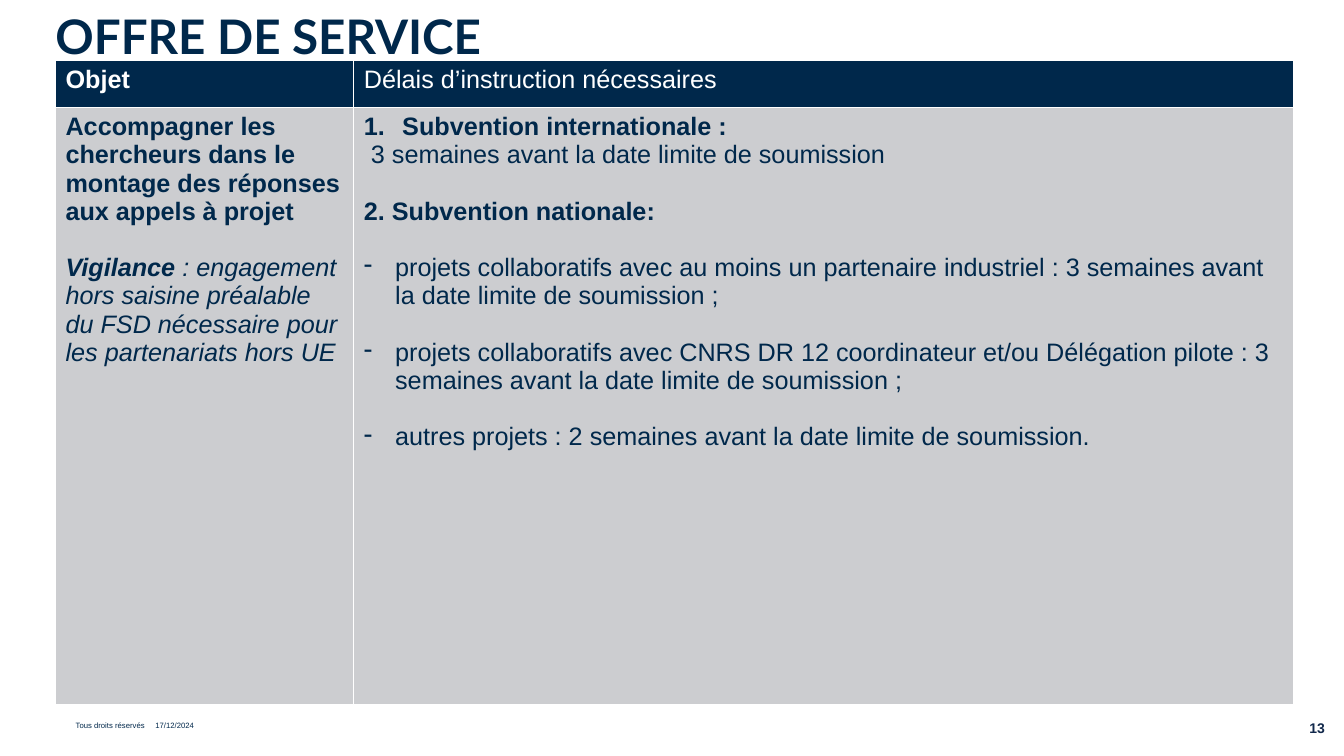
from lxml import etree
from pptx import Presentation
from pptx.dml.color import RGBColor
from pptx.enum.text import MSO_ANCHOR, PP_ALIGN
from pptx.oxml.ns import qn
from pptx.util import Inches, Pt

NAVY = RGBColor(0x00, 0x28, 0x4B)
PAGE_NAVY = RGBColor(0x11, 0x28, 0x4B)
GREY = RGBColor(0xCC, 0xCD, 0xD0)
WHITE = RGBColor(0xFF, 0xFF, 0xFF)
TOP, MIDDLE = MSO_ANCHOR.TOP, MSO_ANCHOR.MIDDLE
LEFT, RIGHT = PP_ALIGN.LEFT, PP_ALIGN.RIGHT
BODY_SIZE = 18
LINE_GAP = Pt(20.1)
DATE_TAB = Inches(0.79)

# A paragraph is (runs, gap before, indent, hanging bullet); a run is (text, bold, italic).
HEADER = [
    [([("Objet", True, False)], False, 0, None)],
    [([("Délais d’instruction nécessaires", False, False)], False, 0, None)],
]
SUPPORT = [
    ([("Accompagner les chercheurs dans le montage des réponses aux appels à projet",
       True, False)], False, 0, None),
    ([("Vigilance", True, True),
      (" : engagement hors saisine préalable du FSD nécessaire pour les partenariats hors UE",
       False, True)], True, 0, None),
]
PROJECTS = [
    "projets collaboratifs avec au moins un partenaire industriel : "
    "3 semaines avant la date limite de soumission ;",
    "projets collaboratifs avec CNRS DR 12 coordinateur et/ou Délégation pilote : "
    "3 semaines avant la date limite de soumission ;",
    "autres projets : 2 semaines avant la date limite de soumission.",
]
DEADLINES = [
    ([("Subvention internationale :", True, False)], False, 0.38, "1."),
    ([("3 semaines avant la date limite de soumission", False, False)], False, 0.07, None),
    ([("2. Subvention nationale:", True, False)], True, 0, None),
] + [([(text, False, False)], True, 0.31, "-") for text in PROJECTS]


class SlideBuilder:
    """Holds the style and the slide; lengths are percentages of the slide's size."""

    def __init__(self, prs):
        self.prs = prs
        self.slide = prs.slides.add_slide(prs.slide_layouts[6])

    def across(self, share):
        return round(self.prs.slide_width * share / 100)

    def down(self, share):
        return round(self.prs.slide_height * share / 100)

    def style(self, r, size, color, bold=False, italic=False, font="Arial"):
        r.font.name, r.font.size, r.font.color.rgb = font, Pt(size), color
        r.font.bold, r.font.italic = bold, italic

    def text(self, text, box, size, color, bold=False, font="Arial",
             align=LEFT, anchor=TOP, spacing=None):
        x, y, w, h = box
        sp = self.slide.shapes.add_textbox(
            self.across(x), self.down(y), self.across(w), self.down(h))
        tf = sp.text_frame
        tf.word_wrap, tf.vertical_anchor = True, anchor
        tf.margin_left = tf.margin_top = tf.margin_right = tf.margin_bottom = 0
        p = tf.paragraphs[0]
        p.text, p.alignment, p.line_spacing = text, align, spacing
        self.style(p.runs[0], size, color, bold, font=font)
        return p

    def tab(self, p, position):
        tabs = etree.SubElement(p._p.get_or_add_pPr(), qn("a:tabLst"))
        etree.SubElement(tabs, qn("a:tab"), pos=str(position), algn="l")

    def indent(self, p, inches, bullet):
        pPr = p._p.get_or_add_pPr()
        pPr.set("marL", str(Inches(inches)))
        if bullet == "1.":
            etree.SubElement(pPr, qn("a:buAutoNum"), type="arabicPeriod")
        elif bullet:
            etree.SubElement(pPr, qn("a:buChar"), char=bullet)
        if bullet:
            pPr.set("indent", str(-Inches(inches)))

    def borders(self, cell):
        tcPr = cell._tc.get_or_add_tcPr()
        for i, side in enumerate(("a:lnL", "a:lnR", "a:lnT", "a:lnB")):
            ln = etree.Element(qn(side), w=str(Pt(1)))
            fill = etree.SubElement(ln, qn("a:solidFill"))
            etree.SubElement(fill, qn("a:srgbClr"), val=str(WHITE))
            tcPr.insert(i, ln)

    def cell(self, cell, paragraphs, fill, color):
        cell.fill.solid()
        cell.fill.fore_color.rgb = fill
        self.borders(cell)
        tf = cell.text_frame
        for i, (runs, gap, inches, bullet) in enumerate(paragraphs):
            p = tf.add_paragraph() if i else tf.paragraphs[0]
            self.indent(p, inches, bullet)
            if gap:
                p.space_before = LINE_GAP
            for text, bold, italic in runs:
                r = p.add_run()
                r.text = text
                self.style(r, BODY_SIZE, color, bold, italic)

    def table(self, x, y, widths, heights, rows):
        """Draw rows given as (cells, fill, text colour)."""
        table = self.slide.shapes.add_table(
            len(heights), len(widths), self.across(x), self.down(y),
            self.across(sum(widths)), self.down(sum(heights))).table
        table.first_row = table.horz_banding = False
        for column, width in zip(table.columns, widths):
            column.width = self.across(width)
        for row, height, (cells, fill, color) in zip(table.rows, heights, rows):
            row.height = self.down(height)
            for cell, paragraphs in zip(row.cells, cells):
                self.cell(cell, paragraphs, fill, color)


def main():
    prs = Presentation()
    prs.slide_width, prs.slide_height = Inches(13.33), Inches(7.5)
    s = SlideBuilder(prs)
    footer = s.text("Tous droits réservés\t17/12/2024", (5.63, 95.47, 15.98, 1.2),
                    5.5, NAVY, spacing=0.9)
    s.tab(footer, DATE_TAB)
    s.text("OFFRE DE SERVICE", (4.13, 1.87, 92.12, 8.67), 34, NAVY,
           bold=True, font="Lato", spacing=Pt(35.8))
    s.text("13", (90.77, 93.33, 7.8, 5.87), 10, PAGE_NAVY,
           bold=True, align=RIGHT, anchor=MIDDLE)
    s.table(4.13, 8, (22.2, 69.92), (6.27, 78.93),
            [(HEADER, NAVY, WHITE), ([SUPPORT, DEADLINES], GREY, NAVY)])
    prs.save("out.pptx")


if __name__ == "__main__":
    main()
